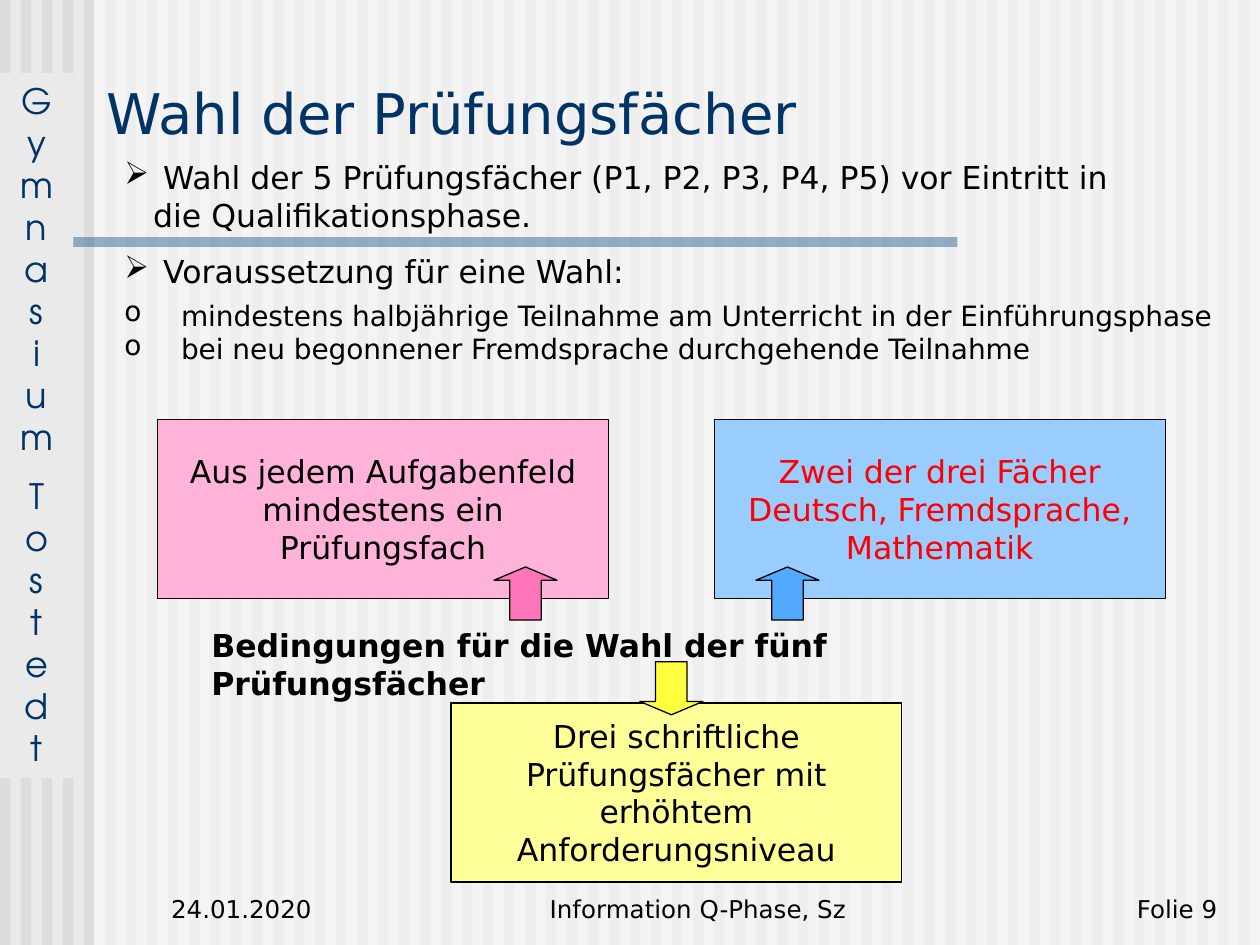
from lxml import etree
from pptx import Presentation
from pptx import util as u
from pptx.dml import color
from pptx.enum import shapes, text
from pptx.oxml import ns

NAVY = color.RGBColor(0x00, 0x33, 0x66)
STEEL = color.RGBColor(0x33, 0x66, 0x99)
BLACK = color.RGBColor(0x00, 0x00, 0x00)
WHITE = color.RGBColor(0xFF, 0xFF, 0xFF)
RED = color.RGBColor(0xFF, 0x00, 0x00)
PALE_GREY = color.RGBColor(0xEA, 0xEA, 0xEA)
STRIPE_GREY = color.RGBColor(0xDD, 0xDD, 0xDD)
PALE_PINK = color.RGBColor(0xFF, 0xB3, 0xD9)
PINK = color.RGBColor(0xFF, 0x75, 0xBA)
PALE_BLUE = color.RGBColor(0x99, 0xCC, 0xFF)
BLUE = color.RGBColor(0x53, 0xA9, 0xFF)
PALE_YELLOW = color.RGBColor(0xFF, 0xFF, 0x99)
YELLOW = color.RGBColor(0xFF, 0xFF, 0x3D)

BODY_FONT = "DejaVu Sans"
RAIL_FONT = "TeX Gyre Adventor"
SLIDE_WIDTH, SLIDE_HEIGHT = 25.4, 19.05
STRIPE_COUNT = 60

RECTANGLE = shapes.MSO_SHAPE.RECTANGLE
UP_ARROW = shapes.MSO_SHAPE.UP_ARROW
DOWN_ARROW = shapes.MSO_SHAPE.DOWN_ARROW
LEFT, CENTER, RIGHT = text.PP_ALIGN.LEFT, text.PP_ALIGN.CENTER, text.PP_ALIGN.RIGHT
TOP, MIDDLE, BOTTOM = text.MSO_ANCHOR.TOP, text.MSO_ANCHOR.MIDDLE, text.MSO_ANCHOR.BOTTOM


def set_all(target, formats):
    for name, value in formats.items():
        setattr(target, name, value)


def add_bullet(paragraph, character, indent):
    properties = paragraph._p.get_or_add_pPr()
    properties.set("marL", str(u.Cm(indent)))
    properties.set("indent", str(-u.Cm(indent)))
    etree.SubElement(properties, ns.qn("a:buChar")).set("char", character)


def write_paragraph(paragraph, words, size=18, name=BODY_FONT, bold=False,
                    rgb=BLACK, alignment=LEFT, before=0, bullet=None):
    paragraph.text = words
    set_all(paragraph, {"alignment": alignment, "space_before": u.Pt(before)})
    if bullet:
        add_bullet(paragraph, *bullet)
    for run in paragraph.runs:
        set_all(run.font, {"size": u.Pt(size), "name": name, "bold": bold})
        run.font.color.rgb = rgb


def fill_frame(shape, entries, anchor=TOP):
    frame = shape.text_frame
    set_all(frame, {"word_wrap": True, "vertical_anchor": anchor})
    for index, entry in enumerate(entries):
        paragraph = frame.add_paragraph() if index else frame.paragraphs[0]
        write_paragraph(paragraph, **entry)


def add_text(slide, box, entries, anchor=TOP):
    fill_frame(slide.shapes.add_textbox(*map(u.Cm, box)), entries, anchor)


def add_block(slide, box, fill, kind=RECTANGLE, outlined=False, opacity=None):
    shape = slide.shapes.add_shape(kind, *map(u.Cm, box))
    shape.shadow.inherit = False
    shape.fill.solid()
    shape.fill.fore_color.rgb = fill
    if opacity:
        solid = shape.fill._xPr.find(ns.qn("a:solidFill"))
        etree.SubElement(solid[0], ns.qn("a:alpha")).set("val", str(opacity * 1000))
    if outlined:
        shape.line.color.rgb = BLACK
        shape.line.width = u.Pt(0.75)
    else:
        shape.line.fill.background()
    return shape


def add_backdrop(slide, box):
    left, top, width, height = box
    pitch = width / STRIPE_COUNT
    for index in range(STRIPE_COUNT):
        add_block(slide, (left + index * pitch, top, pitch / 2, height), STRIPE_GREY)
    add_block(slide, (left + 1.9, top, width - 1.9, height), WHITE, opacity=50)
    add_block(slide, (left, top + 4.78, 19.3, 0.2), STEEL, opacity=50)


def add_school_rail(slide, box):
    style = {"size": 20, "name": RAIL_FONT, "rgb": NAVY, "alignment": CENTER}
    entries = [{"words": "\v".join(word), "before": before, **style}
               for word, before in (("Gymnasium", 0), ("Tostedt", 10))]
    fill_frame(add_block(slide, box, PALE_GREY), entries)


def add_title(slide, box):
    entry = {"words": "Wahl der Prüfungsfächer", "size": 32, "rgb": NAVY}
    add_text(slide, box, [entry], BOTTOM)


def add_requirements(slide, box):
    left, top, width, height = box
    arrow, circle = ("➢", 0.58), ("o", 1.14)
    add_text(slide, (left, top, 20.4, 1.78), [
        {"words": " Wahl der 5 Prüfungsfächer (P1, P2, P3, P4, P5) vor Eintritt in "
                  "die Qualifikationsphase.", "bullet": arrow}])
    add_text(slide, (left, top + 1.88, width, height - 1.88), [
        {"words": " Voraussetzung für eine Wahl:", "bullet": arrow},
        {"words": "mindestens halbjährige Teilnahme am Unterricht in der Einführungsphase",
         "size": 16, "before": 5, "bullet": circle},
        {"words": "bei neu begonnener Fremdsprache durchgehende Teilnahme",
         "size": 16, "bullet": circle}])


def add_conditions(slide, box):
    left, top, width, height = box
    card_width, card_height = 9.09, 3.61
    cards = (
        (0, 0, PALE_PINK, BLACK, "Aus jedem Aufgabenfeld mindestens ein Prüfungsfach"),
        (width - card_width, 0, PALE_BLUE, RED,
         "Zwei der drei Fächer Deutsch, Fremdsprache, Mathematik"),
        (5.91, height - card_height, PALE_YELLOW, BLACK,
         "Drei schriftliche Prüfungsfächer mit erhöhtem Anforderungsniveau"),
    )
    arrows = ((6.78, 2.97, PINK, UP_ARROW), (12.06, 2.97, BLUE, UP_ARROW),
              (9.72, 4.88, YELLOW, DOWN_ARROW))
    for x, y, fill, rgb, words in cards:
        card = add_block(slide, (left + x, top + y, card_width, card_height), fill, outlined=True)
        fill_frame(card, [{"words": words, "rgb": rgb, "alignment": CENTER}], MIDDLE)
    heading = {"words": "Bedingungen für die Wahl der fünf Prüfungsfächer", "bold": True}
    add_text(slide, (left + 0.83, top + 4.04, 18.57, 1.02), [heading])
    for x, y, fill, kind in arrows:
        arrow = add_block(slide, (left + x, top + y, 1.27, 1.07), fill, kind, outlined=True)
        arrow.adjustments[0], arrow.adjustments[1] = 0.5, 0.25


def add_footer(slide, box):
    left, top, width, height = box
    side = 5.28
    parts = ((0, side, LEFT, "24.01.2020"),
             (5.89, 9.96, CENTER, "Information Q-Phase, Sz"),
             (width - side, side, RIGHT, "Folie 9"))
    for x, part_width, alignment, words in parts:
        entry = {"words": words, "size": 14, "alignment": alignment}
        add_text(slide, (left + x, top, part_width, height), [entry], BOTTOM)


def main():
    presentation = Presentation()
    set_all(presentation, {"slide_width": u.Cm(SLIDE_WIDTH), "slide_height": u.Cm(SLIDE_HEIGHT)})
    slide = presentation.slides.add_slide(presentation.slide_layouts[6])
    slide.background.fill.solid()
    slide.background.fill.fore_color.rgb = PALE_GREY
    add_backdrop(slide, (0, 0, SLIDE_WIDTH, SLIDE_HEIGHT))
    add_school_rail(slide, (0, 1.47, 1.48, 14.22))
    add_footer(slide, (3.2, 17.48, 21.59, 1.27))
    add_requirements(slide, (2.26, 3.07, 22.5, 4.47))
    add_conditions(slide, (3.18, 8.46, 20.31, 9.32))
    add_title(slide, (1.9, 1.47, 17.15, 1.6))
    presentation.save("out.pptx")


if __name__ == "__main__":
    main()
